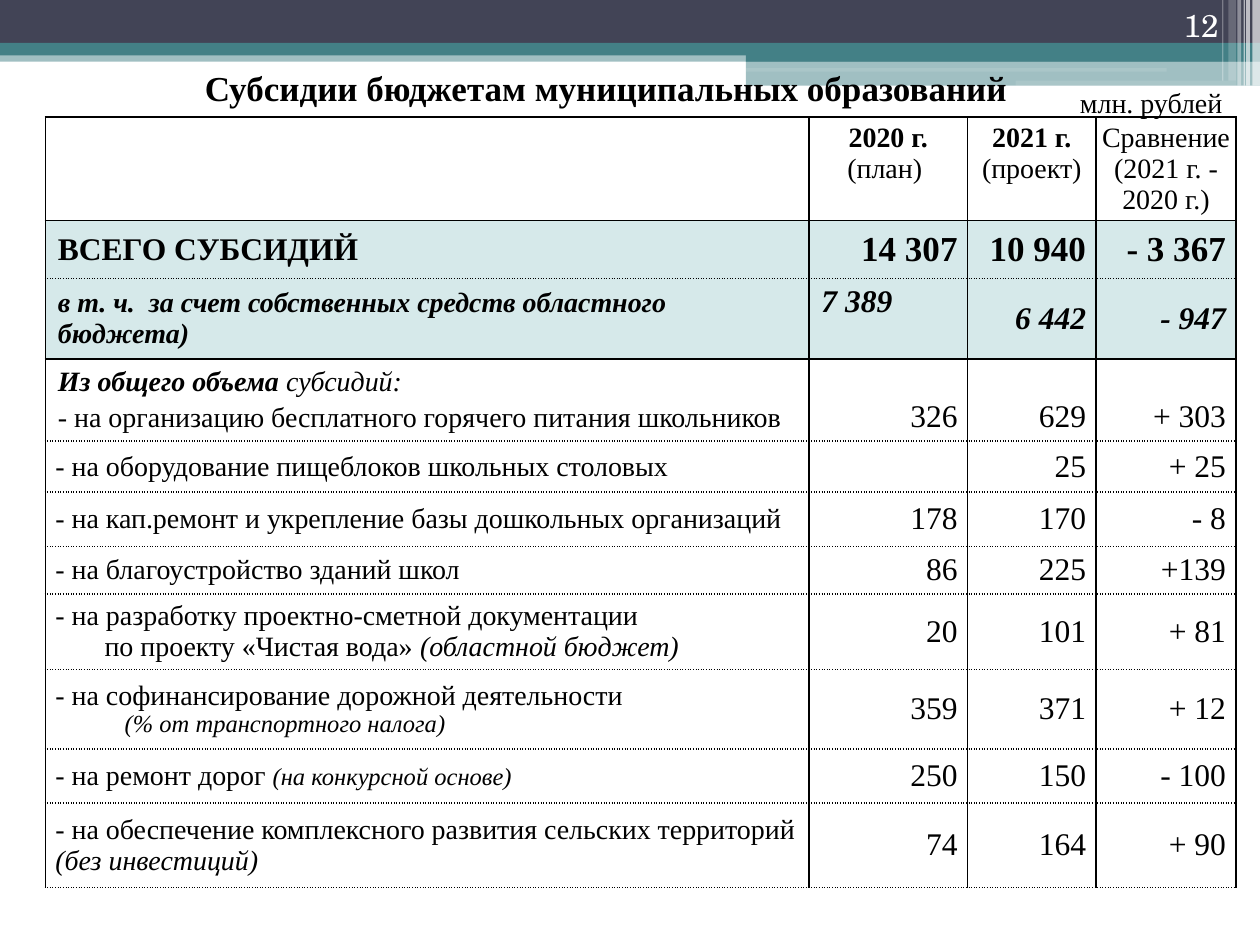
from lxml.etree import SubElement
from pptx import Presentation
from pptx.dml.color import RGBColor
from pptx.enum.shapes import MSO_SHAPE
from pptx.enum.text import MSO_ANCHOR, PP_ALIGN
from pptx.oxml.ns import qn
from pptx.util import Inches, Pt

BLACK = RGBColor(0x00, 0x00, 0x00)
WHITE = RGBColor(0xFF, 0xFF, 0xFF)
NAVY = RGBColor(0x42, 0x44, 0x56)
TEAL = RGBColor(0x43, 0x80, 0x86)
PALE_TEAL = RGBColor(0xD6, 0xE9, 0xEA)
SERIF = "Times New Roman"
SCHOOL = "TeX Gyre Schola"

PLAIN = {"size": Pt(16)}
BOLD = {"size": Pt(16), "bold": True}
ITALIC = {"size": Pt(16), "italic": True}
BOLD_ITALIC = {"size": Pt(16), "bold": True, "italic": True}
SMALL_ITALIC = {"size": Pt(14), "italic": True}
FIGURE = {"size": Pt(18)}
TOTAL_LABEL = {"size": Pt(18), "bold": True}
TOTAL_FIGURE = {"size": Pt(20), "bold": True}
OWN_FIGURE = {"size": Pt(18), "bold": True, "italic": True}

# Bars: left, top, width, height, colour, opacity in percent
BARS = [
    (0, 0.4, 10, 0.09, TEAL, 50),
    (0, 0, 10, 0.34, NAVY, 100),
    (0, 0.34, 10, 0.1, TEAL, 100),
    (5.92, 0.39, 4.08, 0.1, TEAL, 100),
    (5.92, 0.48, 4.08, 0.2, TEAL, 50),
    (5.91, 0.54, 3.35, 0.03, WHITE, 11),
    (8.06, 0.64, 1.75, 0.04, WHITE, 11),
    (9.94, 0, 0.06, 0.68, WHITE, 65),
    (9.89, 0, 0.03, 0.68, WHITE, 65),
    (9.87, 0, 0.01, 0.68, WHITE, 60),
    (9.82, 0, 0.03, 0.68, WHITE, 40),
    (9.75, 0, 0.06, 0.64, WHITE, 20),
    (9.7, 0, 0.01, 0.64, WHITE, 30),
]

COLUMN_WIDTHS = [6.06, 1.26, 1.02, 1.11]
HEADER_HEIGHT = 0.81
HEADERS = [
    [],
    [[("2020 г. ", BOLD), ("(план) ", PLAIN)]],
    [[("2021 г.", BOLD)], [("(проект)", PLAIN)]],
    [[("Сравнение (2021 г. -", PLAIN)], [("2020 г.)", PLAIN)]],
]
# Rows: height, label paragraphs, figures, figure format
ROWS = [
    (0.46, [[("ВСЕГО СУБСИДИЙ", TOTAL_LABEL)]],
     ["14 307", "10 940", "- 3 367"], TOTAL_FIGURE),
    (0.64, [[("в т. ч.  за счет собственных средств областного бюджета)", BOLD_ITALIC)]],
     ["7 389", "6 442", "- 947"], OWN_FIGURE),
    (0.65, [[("Из общего объема ", BOLD_ITALIC), ("субсидий:", ITALIC)],
            [("- на организацию бесплатного горячего питания школьников", PLAIN)]],
     ["326", "629", "+ 303"], FIGURE),
    (0.38, [[("- на оборудование пищеблоков школьных столовых", PLAIN)]],
     ["", "25", "+ 25"], FIGURE),
    (0.43, [[("- на кап.ремонт и укрепление базы дошкольных организаций", PLAIN)]],
     ["178", "170", "- 8"], FIGURE),
    (0.37, [[("- на благоустройство зданий школ", PLAIN)]],
     ["86", "225", "+139"], FIGURE),
    (0.6, [[("- на разработку проектно-сметной документации", PLAIN)],
           [("по проекту «Чистая вода» ", PLAIN), ("(областной бюджет)", ITALIC)]],
     ["20", "101", "+ 81"], FIGURE),
    (0.63, [[("- на софинансирование дорожной деятельности", PLAIN)],
            [("(% от транспортного налога)", SMALL_ITALIC)]],
     ["359", "371", "+ 12"], FIGURE),
    (0.43, [[("- на ремонт дорог ", PLAIN), ("(на конкурсной основе)", SMALL_ITALIC)]],
     ["250", "150", "- 100"], FIGURE),
    (0.67, [[("- на обеспечение комплексного развития сельских территорий ", PLAIN),
             ("(без инвестиций)", ITALIC)]],
     ["74", "164", "+ 90"], FIGURE),
]
OWN_ROW, FIRST_ITEM_ROW = 2, 3
SECOND_LINE_INDENTS = {7: 0.39, 8: 0.55}


def write_text(frame, paragraphs, alignment, color=BLACK, font_name=SERIF):
    for index, runs in enumerate(paragraphs):
        paragraph = frame.paragraphs[0] if index == 0 else frame.add_paragraph()
        paragraph.alignment = alignment
        for text, style in runs:
            run = paragraph.add_run()
            run.text = text
            values = {"name": font_name, "bold": False, "italic": False, **style}
            for name, value in values.items():
                setattr(run.font, name, value)
            run.font.color.rgb = color


def add_bars(slide):
    for left, top, width, height, color, opacity in BARS:
        bar = slide.shapes.add_shape(MSO_SHAPE.RECTANGLE, Inches(left), Inches(top),
                                     Inches(width), Inches(height))
        bar.shadow.inherit = False
        bar.fill.solid()
        bar.fill.fore_color.rgb = color
        bar.line.fill.background()
        if opacity < 100:
            color_element = bar.fill._xPr.find(qn("a:solidFill"))[0]
            SubElement(color_element, qn("a:alpha"), val=str(opacity * 1000))


def place_title(slide, left, top, width, height):
    title = slide.shapes.title
    box = {"left": left, "top": top, "width": width, "height": height}
    for name, value in box.items():
        setattr(title, name, Inches(value))
    title.text_frame.vertical_anchor = MSO_ANCHOR.MIDDLE
    write_text(title.text_frame,
               [[("Субсидии бюджетам муниципальных образований",
                  {"size": Pt(20), "bold": True})]], PP_ALIGN.CENTER)
    # Bring the title in front of the bars
    slide.shapes._spTree.append(title._element)


def add_label(slide, left, top, width, height, text, style, anchor, **look):
    box = slide.shapes.add_textbox(Inches(left), Inches(top), Inches(width), Inches(height))
    box.text_frame.word_wrap = True
    box.text_frame.vertical_anchor = anchor
    write_text(box.text_frame, [[(text, style)]], PP_ALIGN.RIGHT, **look)


def set_borders(cell, top_dash, bottom_dash):
    properties = cell._tc.get_or_add_tcPr()
    dashes = {"a:lnL": "solid", "a:lnR": "solid", "a:lnT": top_dash, "a:lnB": bottom_dash}
    for position, (side, dash) in enumerate(dashes.items()):
        line = SubElement(properties, qn(side), w=str(Pt(1)))
        properties.insert(position, line)
        fill = SubElement(line, qn("a:solidFill"))
        SubElement(fill, qn("a:srgbClr"), val=str(BLACK))
        SubElement(line, qn("a:prstDash"), val=dash)


def format_cell(cell, anchor, margins, fill=None):
    sides = ("margin_left", "margin_top", "margin_right", "margin_bottom")
    for side, margin in zip(sides, margins):
        setattr(cell, side, Inches(margin))
    cell.vertical_anchor = anchor
    if fill is None:
        cell.fill.background()
    else:
        cell.fill.solid()
        cell.fill.fore_color.rgb = fill


def fill_row(table, row, label, figures, style):
    fill = PALE_TEAL if row < FIRST_ITEM_ROW else None
    anchor = MSO_ANCHOR.BOTTOM if row == FIRST_ITEM_ROW else MSO_ANCHOR.MIDDLE
    label_left = 0.1 if row <= FIRST_ITEM_ROW else 0.08

    # Label
    cell = table.cell(row, 0)
    format_cell(cell, MSO_ANCHOR.MIDDLE, (label_left, 0.05, 0.1, 0.05), fill)
    write_text(cell.text_frame, label, PP_ALIGN.LEFT)
    if row == FIRST_ITEM_ROW:
        cell.text_frame.paragraphs[1].space_before = Pt(3)
    if row in SECOND_LINE_INDENTS:
        indent = Inches(SECOND_LINE_INDENTS[row])
        cell.text_frame.paragraphs[1]._p.get_or_add_pPr().set("marL", str(indent))

    # Figures
    for column, figure in enumerate(figures, start=1):
        cell = table.cell(row, column)
        raised = row == OWN_ROW and column == 1
        format_cell(cell, MSO_ANCHOR.TOP if raised else anchor, (0.1, 0.05, 0.08, 0.05), fill)
        if figure:
            write_text(cell.text_frame, [[(figure, style)]],
                       PP_ALIGN.LEFT if raised else PP_ALIGN.RIGHT)


def add_subsidy_table(slide, left, top):
    heights = [HEADER_HEIGHT] + [row[0] for row in ROWS]
    frame = slide.shapes.add_table(len(heights), len(COLUMN_WIDTHS), Inches(left), Inches(top),
                                   Inches(sum(COLUMN_WIDTHS)), Inches(sum(heights)))
    table = frame.table
    table.first_row = table.horz_banding = False
    for column, width in zip(table.columns, COLUMN_WIDTHS):
        column.width = Inches(width)
    for row, height in zip(table.rows, heights):
        row.height = Inches(height)

    for column, header in enumerate(HEADERS):
        cell = table.cell(0, column)
        format_cell(cell, MSO_ANCHOR.TOP, (0.02, 0.04, 0.02, 0.04), WHITE)
        write_text(cell.text_frame, header, PP_ALIGN.CENTER)
    for row, (_, label, figures, style) in enumerate(ROWS, start=1):
        fill_row(table, row, label, figures, style)

    # Solid rules frame the header and the totals; the rest are dotted
    for row in range(len(heights)):
        top_dash = "solid" if row in (0, 1, FIRST_ITEM_ROW) else "sysDot"
        bottom_dash = "solid" if row in (0, OWN_ROW) else "sysDot"
        for cell in table.rows[row].cells:
            set_borders(cell, top_dash, bottom_dash)


def main():
    presentation = Presentation()
    presentation.slide_width, presentation.slide_height = Inches(10), Inches(7.5)
    slide = presentation.slides.add_slide(presentation.slide_layouts[5])
    add_bars(slide)
    place_title(slide, -0.19, 0.43, 10, 0.53)
    add_subsidy_table(slide, 0.36, 0.93)
    add_label(slide, 8.94, 0, 0.83, 0.4, "12", FIGURE, MSO_ANCHOR.BOTTOM,
              color=WHITE, font_name=SCHOOL)
    add_label(slide, 8.08, 0.63, 1.72, 0.37, "млн. рублей", PLAIN, MSO_ANCHOR.TOP)
    presentation.save("out.pptx")


if __name__ == "__main__":
    main()
